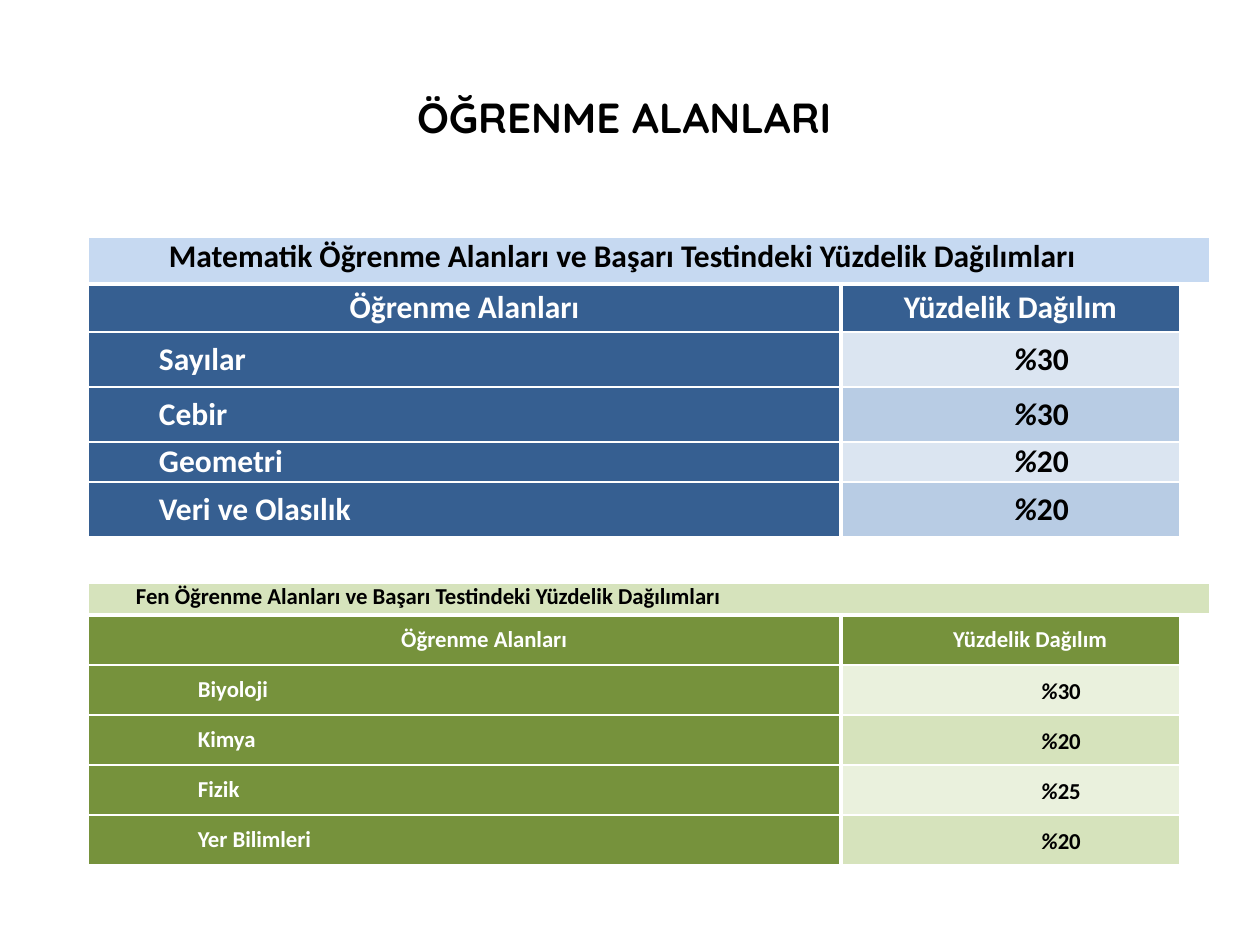
from dataclasses import dataclass

from lxml.etree import SubElement
from pptx import Presentation
from pptx.dml.color import RGBColor
from pptx.enum.text import MSO_ANCHOR, PP_ALIGN
from pptx.oxml.ns import qn
from pptx.util import Emu, Pt

PX_PER_INCH = 126


@dataclass(frozen=True)
class Theme:
    black: str = "000000"
    white: str = "FFFFFF"
    title_font: str = "Quicksand"
    body_font: str = "Calibri"
    title_size: int = 24
    math_size: int = 18
    science_size: int = 13
    thin: int = 1
    thick: int = 3


@dataclass(frozen=True)
class AreaTable:
    caption: str
    areas: tuple[tuple[str, int], ...]
    top: int
    row_heights: tuple[int, ...]
    size: int
    caption_fill: str
    dark: str
    bands: tuple[str, str]
    caption_indent: int
    first_indent: int
    label_align: PP_ALIGN
    value_spacing: float


THEME = Theme()
HEADERS = ("Öğrenme Alanları", "Yüzdelik Dağılım")
TABLE_LEFT = 88
COLUMNS = (753, 339, 14)
CELL_INSET = 9
BODY_MARGIN = 62

MATH = AreaTable(
    caption="Matematik Öğrenme Alanları ve Başarı Testindeki Yüzdelik Dağılımları",
    areas=(("Sayılar", 30), ("Cebir", 30), ("Geometri", 20), ("Veri ve Olasılık", 20)),
    top=237, row_heights=(47, 48, 55, 55, 40, 55), size=THEME.math_size,
    caption_fill="C6D9F1", dark="365F91", bands=("DBE5F1", "B8CCE4"),
    caption_indent=72, first_indent=0, label_align=PP_ALIGN.LEFT, value_spacing=1.0,
)
SCIENCE = AreaTable(
    caption="Fen Öğrenme Alanları ve Başarı Testindeki Yüzdelik Dağılımları",
    areas=(("Biyoloji", 30), ("Kimya", 20), ("Fizik", 25), ("Yer Bilimleri", 20)),
    top=583, row_heights=(32, 50, 50, 50, 50, 50), size=THEME.science_size,
    caption_fill="D6E3BC", dark="76923C", bands=("EAF1DD", "D6E3BC"),
    caption_indent=39, first_indent=39, label_align=PP_ALIGN.JUSTIFY, value_spacing=1.15,
)


def px(n: int) -> Emu:
    return Emu(round(n * 914400 / PX_PER_INCH))


def add_text(p, text: str, *, size: int, color: str, font: str = THEME.body_font,
             bold: bool = True, italic: bool = False) -> None:
    r = p.add_run()
    r.text = text
    r.font.name, r.font.size = font, Pt(size)
    r.font.bold, r.font.italic = bold, italic
    r.font.color.rgb = RGBColor.from_string(color)


def indent(p, margin: int, first: int) -> None:
    pPr = p._p.get_or_add_pPr()
    pPr.set("marL", str(px(margin)))
    pPr.set("indent", str(px(first)))


def set_borders(cell, row: int, col: int) -> None:
    """White rules, thick below the caption and between the two main columns."""
    body = row > 0
    thick = {"lnL": body and col == 1, "lnR": body and col == 0,
             "lnT": row == 1, "lnB": row == 0}
    tcPr = cell._tc.get_or_add_tcPr()
    for side, heavy in thick.items():
        width = Pt(THEME.thick if heavy else THEME.thin)
        ln = SubElement(tcPr, qn(f"a:{side}"), w=str(width))
        fill = SubElement(ln, qn("a:solidFill"))
        SubElement(fill, qn("a:srgbClr"), val=THEME.white)


def style_cell(cell, row: int, col: int, fill: str | None = None):
    """Set borders, insets and fill, and return the paragraph of the cell."""
    set_borders(cell, row, col)
    cell.margin_top = cell.margin_bottom = 0
    if fill:
        cell.margin_left = cell.margin_right = px(CELL_INSET)
        cell.fill.solid()
        cell.fill.fore_color.rgb = RGBColor.from_string(fill)
    else:
        cell.fill.background()
    cell.vertical_anchor = MSO_ANCHOR.MIDDLE if row else MSO_ANCHOR.TOP
    return cell.text_frame.paragraphs[0]


def draw_table(slide, spec_table: AreaTable) -> None:
    t = spec_table
    frame = slide.shapes.add_table(
        len(t.row_heights), len(COLUMNS), px(TABLE_LEFT), px(t.top),
        px(sum(COLUMNS)), px(sum(t.row_heights)))
    table = frame.table
    table.first_row = table.horz_banding = False
    for column, width in zip(table.columns, COLUMNS):
        column.width = px(width)
    for row, height in zip(table.rows, t.row_heights):
        row.height = px(height)

    table.cell(0, 0).merge(table.cell(0, 2))
    p = style_cell(table.cell(0, 0), 0, 0, t.caption_fill)
    indent(p, 0, t.caption_indent)
    add_text(p, t.caption, size=t.size, color=THEME.black)

    for col, header in enumerate(HEADERS):
        p = style_cell(table.cell(1, col), 1, col, t.dark)
        p.alignment = PP_ALIGN.CENTER
        indent(p, 0, t.first_indent)
        add_text(p, header, size=t.size, color=THEME.white)

    for i, (area, percent) in enumerate(t.areas):
        row = i + 2
        p = style_cell(table.cell(row, 0), row, 0, t.dark)
        p.alignment = t.label_align
        indent(p, BODY_MARGIN, t.first_indent)
        add_text(p, area, size=t.size, color=THEME.white)

        p = style_cell(table.cell(row, 1), row, 1, t.bands[i % 2])
        p.alignment, p.line_spacing = PP_ALIGN.CENTER, t.value_spacing
        indent(p, BODY_MARGIN, t.first_indent)
        add_text(p, "%", size=t.size, color=THEME.black, italic=True)
        add_text(p, str(percent), size=t.size, color=THEME.black)

    blanks = [(0, 1), (0, 2)] + [(row, 2) for row in range(1, len(t.row_heights))]
    for row, col in blanks:
        p = style_cell(table.cell(row, col), row, col)
        SubElement(p._p, qn("a:endParaRPr"), sz=str(t.size * 100))


def draw_title(slide, text: str) -> None:
    sp = slide.shapes.title
    sp.left, sp.top, sp.width, sp.height = px(63), px(38), px(1134), px(158)
    tf = sp.text_frame
    tf.word_wrap = True
    tf.vertical_anchor = MSO_ANCHOR.MIDDLE
    p = tf.paragraphs[0]
    p.alignment = PP_ALIGN.CENTER
    add_text(p, text, size=THEME.title_size, color=THEME.black, font=THEME.title_font)


def main() -> None:
    prs = Presentation()
    prs.slide_width, prs.slide_height = px(1260), px(945)
    s = prs.slides.add_slide(prs.slide_layouts[5])
    draw_title(s, "ÖĞRENME ALANLARI ")
    for area_table in (MATH, SCIENCE):
        draw_table(s, area_table)
    prs.save("out.pptx")


if __name__ == "__main__":
    main()
